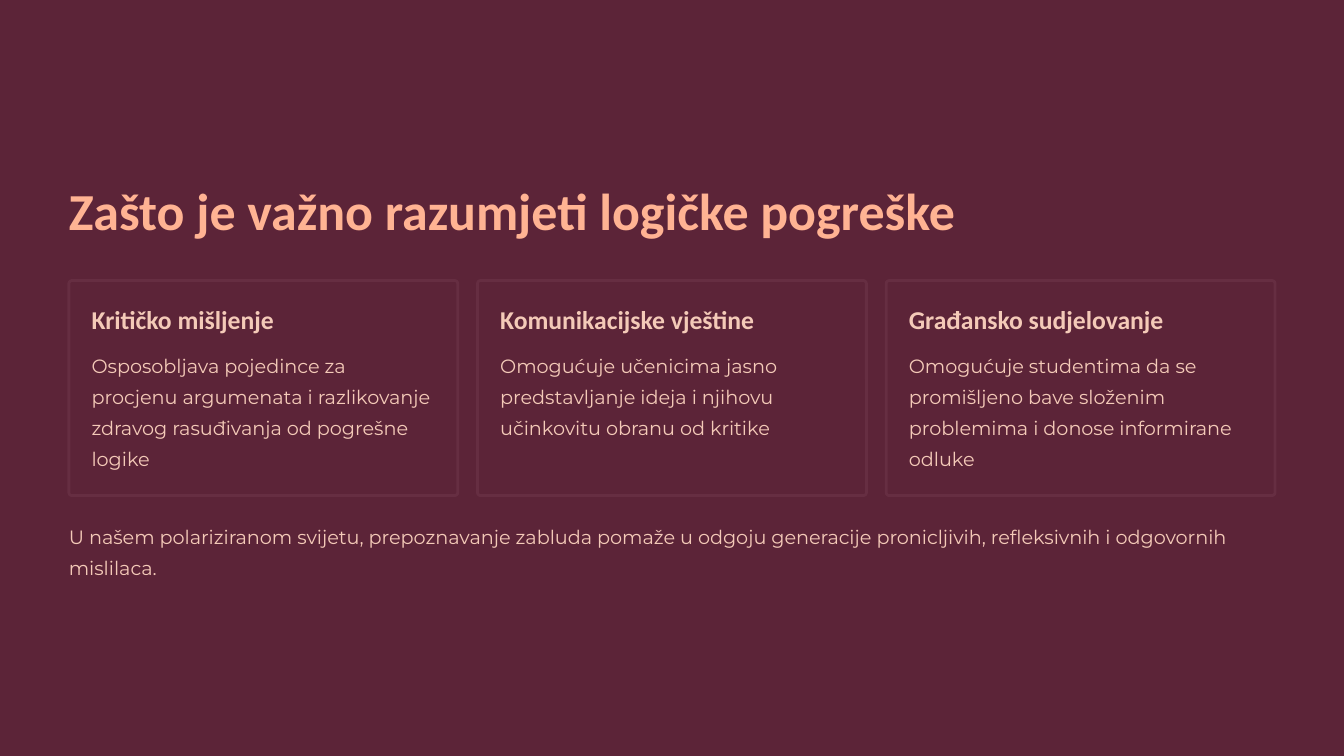
from pptx import Presentation
from pptx.dml.color import RGBColor
from pptx.enum.shapes import MSO_SHAPE as Shape
from pptx.util import Inches, Pt

PLUM = RGBColor(0x5C, 0x24, 0x38)
BORDER = RGBColor(0x66, 0x2E, 0x42)
PEACH = RGBColor(0xFF, 0xB3, 0x93)
BLUSH = RGBColor(0xF4, 0xCA, 0xB8)

HEADING_FONT = "Calibri"
BODY_FONT = "Montserrat"

WIDTH, HEIGHT = 16, 9
MARGIN = 0.82
CONTENT_W = WIDTH - 2 * MARGIN
GAP = 0.235
CARD_TOP, CARD_H = 3.34, 2.56
PADDING = 0.27

CARDS = [
    ("Kritičko mišljenje",
     "Osposobljava pojedince za procjenu argumenata i razlikovanje "
     "zdravog rasuđivanja od pogrešne logike"),
    ("Komunikacijske vještine",
     "Omogućuje učenicima jasno predstavljanje ideja i njihovu "
     "učinkovitu obranu od kritike"),
    ("Građansko sudjelovanje",
     "Omogućuje studentima da se promišljeno bave složenim problemima "
     "i donose informirane odluke"),
]
CARD_W = (CONTENT_W - GAP * (len(CARDS) - 1)) / len(CARDS)


def add_text(slide, box, text, font, size, leading, color, bold=False, wrap=True):
    tf = slide.shapes.add_textbox(*map(Inches, box)).text_frame
    tf.margin_left = tf.margin_top = tf.margin_right = tf.margin_bottom = 0
    tf.word_wrap = wrap
    p = tf.paragraphs[0]
    p.line_spacing = Pt(leading)
    r = p.add_run()
    r.text = text
    r.font.name = font
    r.font.size = Pt(size)
    r.font.bold = bold
    r.font.color.rgb = color


def add_heading(slide, box, text, size, leading, color):
    add_text(slide, box, text, HEADING_FONT, size, leading, color,
             bold=True, wrap=False)


def add_body(slide, box, text):
    add_text(slide, box, text, BODY_FONT, 16.5, 26.5, BLUSH)


def add_card(slide, left, heading, body):
    sp = slide.shapes.add_shape(
        Shape.ROUNDED_RECTANGLE,
        *map(Inches, (left, CARD_TOP, CARD_W, CARD_H)))
    sp.adjustments[0] = 0.014
    sp.shadow.inherit = False
    sp.fill.solid()
    sp.fill.fore_color.rgb = PLUM
    sp.line.color.rgb = BORDER
    sp.line.width = Pt(2.4)

    text_left, text_w = left + PADDING, CARD_W - 2 * PADDING
    add_heading(slide, (text_left, CARD_TOP + 0.26, text_w, 0.39),
                heading, 22, 28, BLUSH)
    add_body(slide, (text_left, CARD_TOP + 0.79, text_w, 1.5), body)


def main():
    prs = Presentation()
    prs.slide_width, prs.slide_height = Inches(WIDTH), Inches(HEIGHT)
    slide = prs.slides.add_slide(prs.slide_layouts[6])
    background = slide.background.fill
    background.solid()
    background.fore_color.rgb = PLUM

    add_heading(slide, (MARGIN, 2.09, CONTENT_W, 0.78),
                "Zašto je važno razumjeti logičke pogreške", 44.5, 56, PEACH)
    for column, (heading, body) in enumerate(CARDS):
        add_card(slide, MARGIN + column * (CARD_W + GAP), heading, body)
    add_body(slide, (MARGIN, 6.16, CONTENT_W, 0.75),
             "U našem polariziranom svijetu, prepoznavanje zabluda pomaže u "
             "odgoju generacije pronicljivih, refleksivnih i odgovornih mislilaca.")

    prs.save("out.pptx")


if __name__ == "__main__":
    main()
